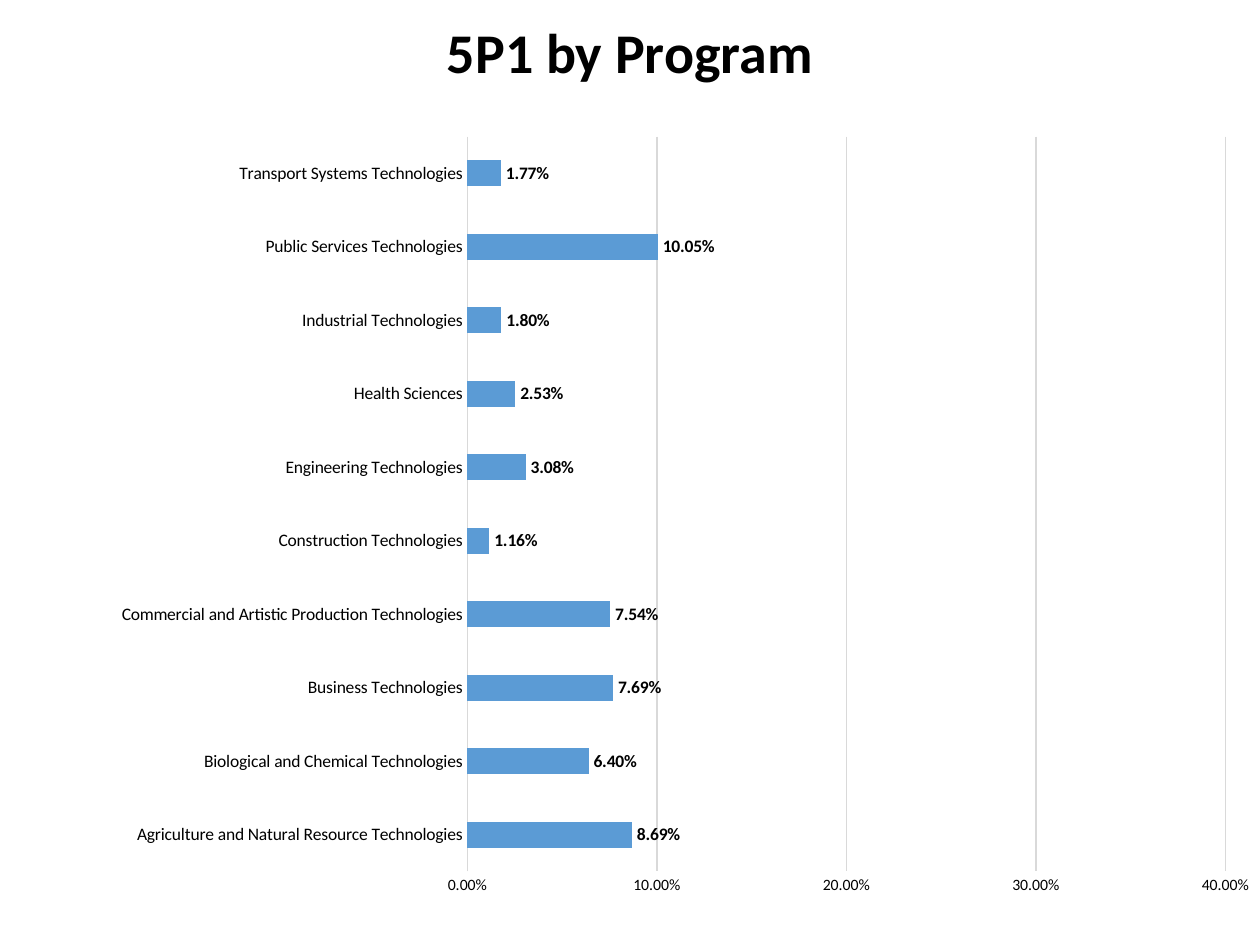
from lxml.etree import SubElement
from pptx import Presentation
from pptx.chart.data import CategoryChartData
from pptx.dml.color import RGBColor
from pptx.enum.chart import XL_CHART_TYPE, XL_LABEL_POSITION, XL_TICK_MARK
from pptx.enum.text import MSO_ANCHOR, PP_ALIGN
from pptx.oxml.ns import qn
from pptx.util import Inches, Pt

COLORS = {"text": "000000", "bar": "5B9BD5", "grid": "D9D9D9"}
PERCENT = "0.00%"
RATES = {
    "Agriculture and Natural Resource Technologies": 0.0869,
    "Biological and Chemical Technologies": 0.064,
    "Business Technologies": 0.0769,
    "Commercial and Artistic Production Technologies": 0.0754,
    "Construction Technologies": 0.0116,
    "Engineering Technologies": 0.0308,
    "Health Sciences": 0.0253,
    "Industrial Technologies": 0.018,
    "Public Services Technologies": 0.1005,
    "Transport Systems Technologies": 0.0177,
}


def style_font(font, size, bold=False):
    font.name = "Calibri"
    font.size = Pt(size)
    font.bold = bold
    font.color.rgb = RGBColor.from_string(COLORS["text"])


def style_line(line):
    line.color.rgb = RGBColor.from_string(COLORS["grid"])
    line.width = Pt(0.75)


prs = Presentation()
prs.slide_width, prs.slide_height = Inches(10), Inches(7.5)
slide = prs.slides.add_slide(prs.slide_layouts[5])

# Title
title = slide.shapes.title
title.left, title.top = Inches(0), Inches(0.15)
title.width, title.height = Inches(10), Inches(0.85)
title.text_frame.vertical_anchor = MSO_ANCHOR.TOP
heading = title.text_frame.paragraphs[0]
heading.alignment = PP_ALIGN.CENTER
heading.line_spacing = 0.9
run = heading.add_run()
run.text = "5P1 by Program"
style_font(run.font, 32, bold=True)

# Chart: the axis runs to 100 %, past the right edge of the slide
data = CategoryChartData(number_format=PERCENT)
data.categories = list(RATES)
data.add_series("Series 1", list(RATES.values()))
chart = slide.shapes.add_chart(
    XL_CHART_TYPE.BAR_CLUSTERED,
    Inches(0.59), Inches(0.96), Inches(18.76), Inches(6.27), data,
).chart
chart.has_title = False
chart.has_legend = False
style_font(chart.font, 10)

programs = chart.category_axis
programs.major_tick_mark = XL_TICK_MARK.NONE
style_font(programs.tick_labels.font, 10)
style_line(programs.format.line)

rates = chart.value_axis
rates.minimum_scale, rates.maximum_scale, rates.major_unit = 0, 1, 0.1
rates.major_tick_mark = XL_TICK_MARK.NONE
rates.format.line.fill.background()
rates.tick_labels.number_format = PERCENT
rates.tick_labels.number_format_is_linked = False
style_font(rates.tick_labels.font, 9)
style_line(rates.major_gridlines.format.line)

plot = chart.plots[0]
plot.gap_width = 182
plot.vary_by_categories = False
bars = plot.series[0]
bars.format.fill.solid()
bars.format.fill.fore_color.rgb = RGBColor.from_string(COLORS["bar"])
labels = bars.data_labels
labels.show_value = True
labels.position = XL_LABEL_POSITION.OUTSIDE_END
labels.number_format = PERCENT
labels.number_format_is_linked = False
style_font(labels.font, 10, bold=True)

# Inner plot area as fractions of the chart
plot_area = chart.element.find(".//" + qn("c:plotArea"))
layout = plot_area.find(qn("c:layout"))
if layout is None:
    layout = SubElement(plot_area, qn("c:layout"))
    plot_area.insert(0, layout)
manual = SubElement(layout, qn("c:manualLayout"))
settings = {
    "layoutTarget": "inner", "xMode": "edge", "yMode": "edge",
    "x": round(3.12 / 18.76, 4), "y": 0.02,
    "w": round(15.04 / 18.76, 4), "h": 0.93,
}
for tag, value in settings.items():
    SubElement(manual, qn("c:" + tag)).set("val", str(value))

prs.save("out.pptx")
